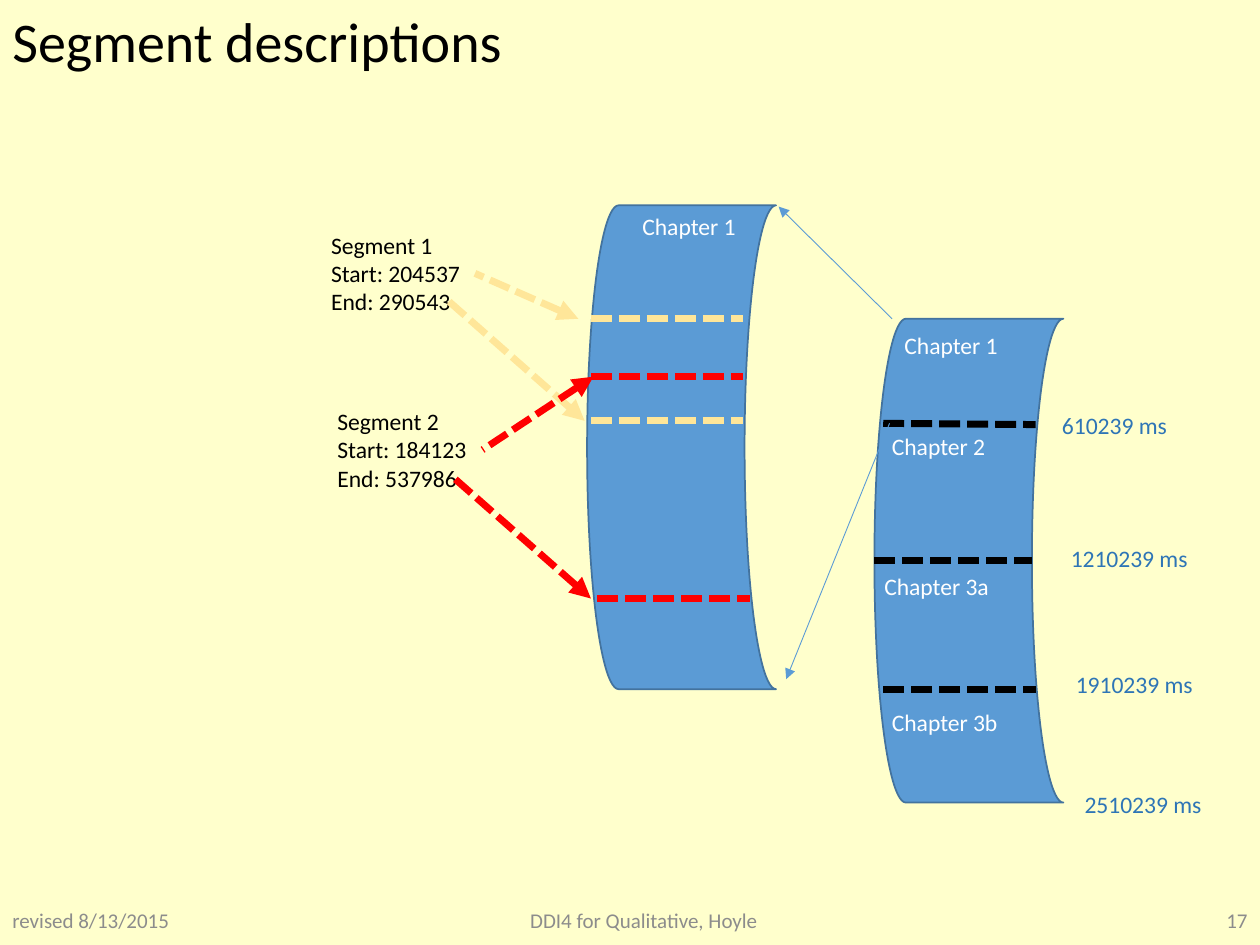
from dataclasses import dataclass

from lxml.etree import SubElement
from pptx import Presentation
from pptx.dml.color import RGBColor
from pptx.enum.dml import MSO_LINE
from pptx.enum.shapes import MSO_CONNECTOR, MSO_SHAPE
from pptx.enum.text import MSO_ANCHOR, MSO_AUTO_SIZE, PP_ALIGN
from pptx.oxml.ns import qn
from pptx.util import Emu, Pt

PX = 9144  # EMU per px, 100 px to the inch
WIDTH, HEIGHT = 1000, 750


@dataclass(frozen=True)
class Theme:
    font: str = "Calibri"
    background: str = "FFFFCC"
    ink: str = "000000"
    muted: str = "8C8C8C"
    white: str = "FFFFFF"
    time: str = "2E75B6"
    drum: str = "5B9BD5"
    drum_edge: str = "43739E"
    first: str = "FFE699"
    second: str = "FF0000"
    title_size: float = 32
    label_size: float = 13.5
    footer_size: float = 12
    marker_width: float = 4
    guide_width: float = 0.5


THEME = Theme()

TITLE = "Segment descriptions"
FOOTERS = [  # text, left, width, alignment
    ("revised 8/13/2015", 0, 225, PP_ALIGN.LEFT),
    ("DDI4 for Qualitative, Hoyle", 342, 338, PP_ALIGN.CENTER),
    ("17", 775, 225, PP_ALIGN.RIGHT),
]
DRUM_SIZE = (150, 384)
CHAPTER_DRUM, RECORDING_DRUM = (466, 163), (694, 253)

# text, left, top, width
CHAPTERS = [
    ("Chapter 1", 500, 163, 95),
    ("Chapter 1", 708, 258, 95),
    ("Chapter 2", 698, 338, 95),
    ("Chapter 3a", 692, 449, 105),
    ("Chapter 3b", 698, 557, 105),
]
TIMES = [
    ("610239 ms", 833, 321, 105),
    ("1210239 ms", 840, 427, 114),
    ("1910239 ms", 844, 527, 114),
    ("2510239 ms", 851, 622, 114),
]
CHAPTER_BREAKS = [  # start, end
    ((701, 336), (822, 337)),
    ((694, 445), (819, 445)),
    ((701, 547), (822, 547)),
]
ZOOM_GUIDES = [((708, 253), (618, 164)), ((706, 336), (624, 539))]
SEGMENTS = [  # marks are left, top; arrows are tip, origin
    {
        "text": "Segment 1\nStart: 204537\nEnd: 290543",
        "at": (253, 178),
        "color": THEME.first,
        "marks": [(469, 253), (469, 334)],
        "arrows": [((459, 253), (377, 217)), ((464, 334), (356, 239))],
    },
    {
        "text": "Segment 2\nStart: 184123\nEnd: 537986",
        "at": (258, 318),
        "color": THEME.second,
        "marks": [(469, 299), (474, 475)],
        "arrows": [((471, 299), (383, 357)), ((469, 475), (361, 380))],
    },
]
MARK_LENGTH = 121
LABEL_HEIGHT = 33
SEGMENT_SIZE = (124, 78)


def rgb(color):
    return RGBColor.from_string(color)


def px(*lengths):
    return [Emu(length * PX) for length in lengths]


def add_text(slide, text, box_at, size, color, align=PP_ALIGN.LEFT):
    box = slide.shapes.add_textbox(*px(*box_at))
    frame = box.text_frame
    frame.word_wrap = True
    frame.vertical_anchor = MSO_ANCHOR.MIDDLE
    frame.text = text
    for para in frame.paragraphs:
        para.alignment = align
        para.font.name = THEME.font
        para.font.size = Pt(size)
        para.font.color.rgb = rgb(color)
    return frame


def add_label(slide, text, box_at, color):
    """Add unwrapped text whose box fits it."""
    frame = add_text(slide, text, box_at, THEME.label_size, color)
    frame.word_wrap = False
    frame.auto_size = MSO_AUTO_SIZE.SHAPE_TO_FIT_TEXT
    frame.vertical_anchor = MSO_ANCHOR.TOP


def add_drum(slide, corner):
    drum = slide.shapes.add_shape(
        MSO_SHAPE.FLOWCHART_STORED_DATA, *px(*corner, *DRUM_SIZE))
    drum.shadow.inherit = False
    drum.fill.solid()
    drum.fill.fore_color.rgb = rgb(THEME.drum)
    drum.line.color.rgb = rgb(THEME.drum_edge)
    drum.line.width = Pt(1)


def add_line(slide, start, end, color, width=THEME.marker_width,
             dashed=True, arrow=None):
    """Add a line; arrow is None, "a:headEnd" (at start) or "a:tailEnd"."""
    connector = slide.shapes.add_connector(
        MSO_CONNECTOR.STRAIGHT, *px(*start, *end))
    line = connector.line
    line.color.rgb = rgb(color)
    line.width = Pt(width)
    if dashed:
        line.dash_style = MSO_LINE.SQUARE_DOT
    properties = connector._element.spPr
    if arrow:
        SubElement(properties.find(qn("a:ln")), qn(arrow), type="triangle")
    SubElement(properties, qn("a:effectLst"))


def add_recording(slide):
    add_drum(slide, RECORDING_DRUM)
    for start, end in CHAPTER_BREAKS:
        add_line(slide, start, end, THEME.ink)
    add_drum(slide, CHAPTER_DRUM)
    for labels, color in ((CHAPTERS, THEME.white), (TIMES, THEME.time)):
        for text, left, top, width in labels:
            add_label(slide, text, (left, top, width, LABEL_HEIGHT), color)
    for start, end in ZOOM_GUIDES:
        add_line(slide, start, end, THEME.drum, THEME.guide_width,
                 dashed=False, arrow="a:tailEnd")


def add_segment(slide, segment):
    for left, top in segment["marks"]:
        add_line(slide, (left, top), (left + MARK_LENGTH, top),
                 segment["color"])
    add_label(slide, segment["text"], segment["at"] + SEGMENT_SIZE, THEME.ink)
    for tip, origin in segment["arrows"]:
        add_line(slide, tip, origin, segment["color"], arrow="a:headEnd")


def main():
    deck = Presentation()
    deck.slide_width, deck.slide_height = px(WIDTH, HEIGHT)
    slide = deck.slides.add_slide(deck.slide_layouts[6])
    slide.background.fill.solid()
    slide.background.fill.fore_color.rgb = rgb(THEME.background)

    title = add_text(slide, TITLE, (0, 1, 825, 68), THEME.title_size, THEME.ink)
    title.paragraphs[0].line_spacing = 0.9
    for text, left, width, align in FOOTERS:
        add_text(slide, text, (left, 710, width, 40),
                 THEME.footer_size, THEME.muted, align)
    add_recording(slide)
    for segment in SEGMENTS:
        add_segment(slide, segment)
    deck.save("out.pptx")


if __name__ == "__main__":
    main()
